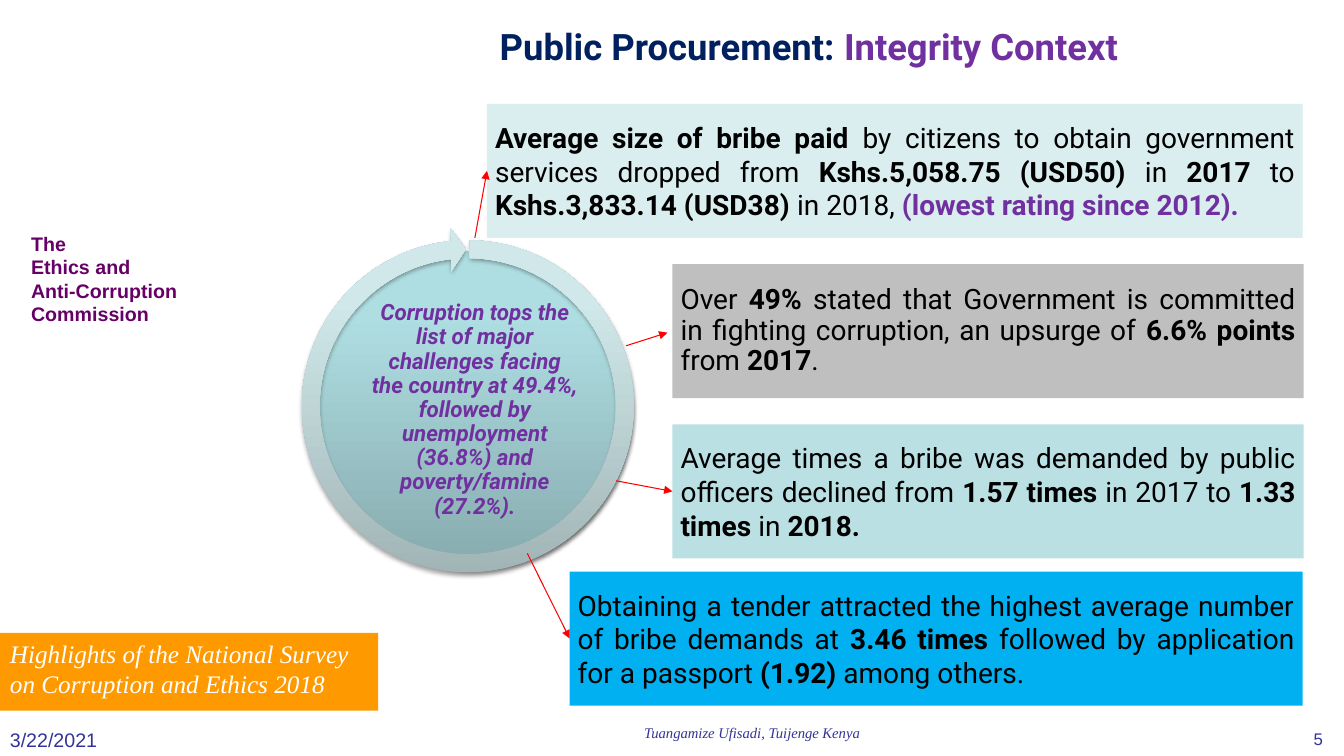
from dataclasses import dataclass

from lxml import etree
from pptx import Presentation, util as u
from pptx.dml.color import RGBColor
from pptx.enum import shapes, text
from pptx.oxml.ns import qn

PX = 9144
PURPLE = "7030A0"
NAVY = "333399"
SHAPE = shapes.MSO_SHAPE
ALIGN = text.PP_ALIGN
ANCHOR = text.MSO_ANCHOR

Box = tuple[int, int, int, int]
Point = tuple[int, int]


@dataclass(frozen=True)
class Finding:
    """A survey finding, its panel and the arrow that leads to it."""
    box: Box
    fill: str
    words: str
    start: Point
    accent: str = ""
    spacing: float = 1.0
    end: Point | None = None


@dataclass(frozen=True)
class Label:
    """A free-standing text with its place and format."""
    box: Box
    words: str
    size: float
    color: str
    font: str = "Arial"
    bold: bool = False
    italic: bool = False
    align: ALIGN = ALIGN.LEFT
    accent: str = ""
    anchor: ANCHOR = ANCHOR.TOP
    spacing: float = 1.0
    inset: Point = (10, 5)


FINDINGS = [
    Finding((483, 103, 809, 133), "DAEDEF",
            "**Average size of bribe paid** by citizens to obtain government services dropped from "
            "**Kshs.5,058.75 (USD50)** in **2017** to **Kshs.3,833.14 (USD38)** in 2018, ",
            (471, 236), accent="(lowest rating since 2012)."),
    Finding((667, 262, 626, 133), "BFBFBF",
            "Over **49%** stated that Government is committed in fighting corruption, "
            "an upsurge of **6.6% points** from **2017**.",
            (621, 343), spacing=0.9, end=(662, 330)),
    Finding((667, 421, 626, 133), "BBE0E3",
            "Average times a bribe was demanded by public officers declined from "
            "**1.57 times** in 2017 to **1.33 times** in **2018.**",
            (611, 477)),
    Finding((565, 567, 727, 133), "00B0F0",
            "Obtaining a tender attracted the highest average number of bribe demands at "
            "**3.46 times** followed by application for a passport **(1.92)** among others.",
            (523, 549)),
]

LABELS = [
    Label((21, 225, 240, 104), "The\nEthics and\nAnti-Corruption\nCommission", 14, "660066", bold=True),
    Label((366, 302, 210, 210),
          "Corruption tops the list of major challenges facing the country at 49.4%, "
          "followed by unemployment (36.8%) and poverty/famine (27.2%).",
          16, PURPLE, "Roboto", bold=True, italic=True, align=ALIGN.CENTER,
          anchor=ANCHOR.MIDDLE, spacing=0.9, inset=(2, 2)),
    Label((312, 0, 981, 92), "Public Procurement: ", 26, "002060", "Roboto", bold=True,
          align=ALIGN.CENTER, accent="Integrity Context", anchor=ANCHOR.MIDDLE),
    Label((0, 717, 454, 25), "3/22/2021", 14, NAVY),
    Label((1219, 718, 103, 32), "5", 12, NAVY, align=ALIGN.RIGHT),
    Label((486, 713, 520, 37), "Tuangamize Ufisadi, Tuijenge Kenya", 10.5, NAVY,
          "Times New Roman", italic=True, align=ALIGN.CENTER),
]


def rgb(value: str) -> RGBColor:
    """Turn a hex string into a colour."""
    return RGBColor.from_string(value)


def px(values) -> list[u.Emu]:
    """Scale px lengths to EMU."""
    return [u.Emu(v * PX) for v in values]


def write(sp, words: str, *, size: float, color: str, font: str, bold=False, italic=False,
          align=ALIGN.LEFT, accent="", anchor=ANCHOR.TOP, spacing=1.0, inset=(10, 5)) -> None:
    """Fill a shape with text, where ** toggles bold and the accent closes in purple."""
    tf = sp.text_frame
    tf.word_wrap = True
    tf.vertical_anchor = anchor
    tf.margin_left, tf.margin_top = tf.margin_right, tf.margin_bottom = px(inset)
    for i, line in enumerate(words.split("\n")):
        p = tf.add_paragraph() if i else tf.paragraphs[0]
        p.alignment = align
        p.line_spacing = spacing
        runs = [(part, bold or j % 2 == 1, color) for j, part in enumerate(line.split("**"))]
        for part, strong, tint in runs + [(accent, True, PURPLE)]:
            if part:
                r = p.add_run()
                r.text = part
                r.font.name, r.font.size = font, u.Pt(size)
                r.font.bold, r.font.italic = strong, italic
                r.font.color.rgb = rgb(tint)


def add_shape(slide, kind: SHAPE, box: Box, fill: str | None = None):
    """Add a borderless preset shape without a shadow."""
    sp = slide.shapes.add_shape(kind, *px(box))
    sp.shadow.inherit = False
    sp.line.fill.background()
    if fill:
        sp.fill.solid()
        sp.fill.fore_color.rgb = rgb(fill)
    return sp


def add_glossy(slide, kind: SHAPE, box: Box, colors: tuple[str, str, str]):
    """Add a shape with an upward gradient and a soft shadow."""
    sp = add_shape(slide, kind, box)
    sp.fill.gradient()
    sp.fill.gradient_angle = 90
    pr = sp._element.spPr
    stops = pr.find(".//" + qn("a:gsLst"))
    stops.clear()
    for pos, color in zip((0, 80000, 100000), colors):
        gs = etree.SubElement(stops, qn("a:gs"), pos=str(pos))
        etree.SubElement(gs, qn("a:srgbClr"), val=color)
    shadow = etree.SubElement(pr.find(qn("a:effectLst")), qn("a:outerShdw"),
                              blurRad="40000", dist="23000", dir="5400000", rotWithShape="0")
    black = etree.SubElement(shadow, qn("a:srgbClr"), val="000000")
    etree.SubElement(black, qn("a:alpha"), val="35000")
    return sp


def add_arrow(slide, start: Point, end: Point):
    """Add a thin red arrow."""
    line = slide.shapes.add_connector(shapes.MSO_CONNECTOR.STRAIGHT, *px(start + end))
    line.line.color.rgb = rgb("FF0000")
    line.line.width = u.Pt(0.75)
    etree.SubElement(line.line._get_or_add_ln(), qn("a:tailEnd"), type="triangle")
    etree.SubElement(line._element.spPr, qn("a:effectLst"))
    return line


def add_finding(slide, item: Finding) -> None:
    """Add a finding's panel and its arrow."""
    sp = add_shape(slide, SHAPE.RECTANGLE, item.box, item.fill)
    write(sp, item.words, size=20, color="000000", font="Roboto", align=ALIGN.JUSTIFY,
          accent=item.accent, anchor=ANCHOR.MIDDLE, spacing=item.spacing, inset=(8, 4))
    x, y, _, h = item.box
    arrow = add_arrow(slide, item.start, item.end or (x, y + h // 2))
    if item.end is None:
        arrow.end_connect(sp, 1)


def add_label(slide, item: Label) -> None:
    """Add a text box for a label."""
    sp = slide.shapes.add_textbox(*px(item.box))
    write(sp, item.words, size=item.size, color=item.color, font=item.font, bold=item.bold,
          italic=item.italic, align=item.align, accent=item.accent, anchor=item.anchor,
          spacing=item.spacing, inset=item.inset)


def main() -> None:
    """Build and save the slide."""
    prs = Presentation()
    prs.slide_width, prs.slide_height = px((1333, 750))
    slide = prs.slides.add_slide(prs.slide_layouts[6])
    add_glossy(slide, SHAPE.OVAL, (313, 249, 315, 315), ("87ABAE", "AFDEE2", "AFE0E4"))
    ring = add_glossy(slide, SHAPE.CIRCULAR_ARROW, (287, 226, 354, 354),
                      ("A0B3B4", "D0E8EA", "D0EAEC"))
    for i, value in enumerate((0.05, 3.28, 158.3, 162.43, 0.06)):
        ring.adjustments[i] = value
    for finding in FINDINGS:
        add_finding(slide, finding)
    banner = add_shape(slide, SHAPE.RECTANGLE, (0, 628, 375, 77), "FF9900")
    write(banner, "Highlights of the National Survey on Corruption and Ethics 2018",
          size=18, color="FFFFFF", font="Times New Roman", italic=True)
    for label in LABELS:
        add_label(slide, label)
    prs.save("out.pptx")


if __name__ == "__main__":
    main()
